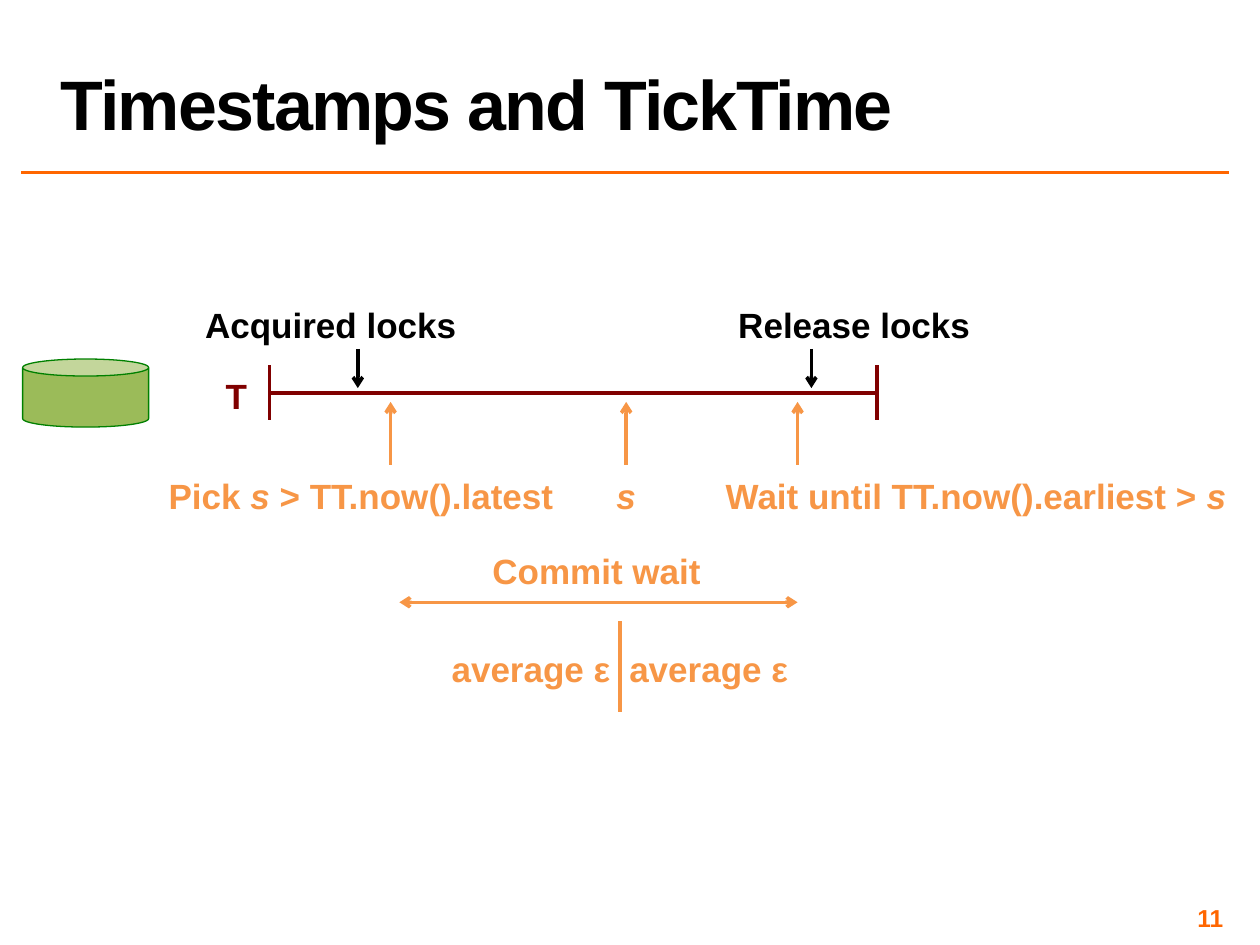
from lxml import etree
from pptx import Presentation
from pptx.dml.color import RGBColor
from pptx.enum.shapes import MSO_CONNECTOR, MSO_SHAPE
from pptx.enum.text import MSO_ANCHOR, PP_ALIGN
from pptx.oxml.ns import qn
from pptx.util import Emu, Pt

PX = 9144  # 100 px to the inch
STRAIGHT = MSO_CONNECTOR.STRAIGHT
CAN = MSO_SHAPE.CAN
MIDDLE, BOTTOM = MSO_ANCHOR.MIDDLE, MSO_ANCHOR.BOTTOM
LEFT, CENTER, RIGHT = PP_ALIGN.LEFT, PP_ALIGN.CENTER, PP_ALIGN.RIGHT
BLACK, MAROON, ORANGE, ACCENT = "000000", "800000", "F79646", "FF6600"
LABEL_H = 44


def px(*values):
    return [Emu(v * PX) for v in values]


def color(hex_string):
    return RGBColor.from_string(hex_string)


def style_run(r, size, hex_string, italic=False):
    r.font.name = "Arial"
    r.font.size = Pt(size)
    r.font.bold = True
    r.font.italic = italic
    r.font.color.rgb = color(hex_string)


def add_line(s, x1, y1, x2, y2, hex_string, ends=()):
    """Draw a line; ends lists headEnd (start) and tailEnd (finish) arrows."""
    line = s.shapes.add_connector(STRAIGHT, *px(x1, y1, x2, y2))
    line.line.color.rgb = color(hex_string)
    line.line.width = Pt(2)
    ln = line.line._get_or_add_ln()
    for end in ends:
        etree.SubElement(ln, qn(f"a:{end}"), type="arrow")
    etree.SubElement(line._element.spPr, qn("a:effectLst"))


def add_label(s, x, y, w, text, hex_string):
    """Add a centred label; parts between asterisks are italic."""
    tf = s.shapes.add_textbox(*px(x, y, w, LABEL_H)).text_frame
    tf.word_wrap = False
    p = tf.paragraphs[0]
    p.alignment = CENTER
    for i, part in enumerate(text.split("*")):
        if part:
            r = p.add_run()
            r.text = part
            style_run(r, 20, hex_string, italic=i % 2 == 1)


def add_title(s, x, y, w, h):
    title = s.shapes.title
    title.left, title.top, title.width, title.height = px(x, y, w, h)
    tf = title.text_frame
    tf.text = "Timestamps and TickTime"
    tf.word_wrap = True
    tf.vertical_anchor = BOTTOM
    p = tf.paragraphs[0]
    p.alignment = LEFT
    p.line_spacing = 0.8
    r = p.runs[0]
    style_run(r, 40, BLACK)
    r.font._element.set("spc", "-100")
    add_line(s, 17, 137, 975, 137, ACCENT)


def add_database(s, x, y, w, h):
    can = s.shapes.add_shape(CAN, *px(x, y, w, h))
    can.shadow.inherit = False
    can.fill.solid()
    can.fill.fore_color.rgb = color("9BBB59")
    can.line.color.rgb = color("008000")
    can.line.width = Pt(0.75)


def add_timeline(s, x, y, w):
    """Draw transaction T along y with its lock and timestamp events."""
    add_line(s, x, y, x + w, y, MAROON)
    for end_x in (x, x + w):
        add_line(s, end_x, y - 22, end_x, y + 21, MAROON)
    add_label(s, x - 49, y - 20, 45, "T", MAROON)

    locks = [(70, -62, 221, "Acquired locks"), (430, 361, 206, "Release locks")]
    for arrow_x, label_x, label_w, text in locks:
        add_label(s, x + label_x, y - 76, label_w, text, BLACK)
        add_line(s, x + arrow_x, y - 35, x + arrow_x, y - 4, BLACK, ["tailEnd"])

    stamps = [
        (96, -91, 327, "Pick *s* > TT.now().latest"),
        (283, 265, 36, "*s*"),
        (419, 351, 419, "Wait until TT.now().earliest > *s*"),
    ]
    for arrow_x, label_x, label_w, text in stamps:
        add_label(s, x + label_x, y + 60, label_w, text, ORANGE)
        add_line(s, x + arrow_x, y + 57, x + arrow_x, y + 7, ORANGE, ["tailEnd"])


def add_commit_wait(s, x, y, w):
    """Draw the wait as a double arrow along y, split into two averages."""
    add_label(s, x + 63, y - 47, 187, "Commit wait", ORANGE)
    add_line(s, x, y, x + w, y, ORANGE, ["headEnd", "tailEnd"])
    add_line(s, x + 175, y + 87, x + 175, y + 15, ORANGE)
    for label_x in (31, 172):
        add_label(s, x + label_x, y + 31, 147, "average ε", ORANGE)


def add_page_number(s, x, y, w, h):
    tf = s.shapes.add_textbox(*px(x, y, w, h)).text_frame
    tf.text = "11"
    tf.word_wrap = True
    tf.vertical_anchor = MIDDLE
    tf.margin_left = tf.margin_right = tf.margin_top = tf.margin_bottom = Emu(4 * PX)
    p = tf.paragraphs[0]
    p.alignment = RIGHT
    style_run(p.runs[0], 14, ACCENT)


def main():
    prs = Presentation()
    prs.slide_width, prs.slide_height = px(1000, 750)
    s = prs.slides.add_slide(prs.slide_layouts[5])
    add_title(s, 38, 2, 937, 117)
    add_timeline(s, 214, 312, 482)
    add_commit_wait(s, 317, 478, 316)
    add_page_number(s, 742, 717, 233, 23)
    add_database(s, 18, 285, 100, 54)
    prs.save("out.pptx")


if __name__ == "__main__":
    main()
